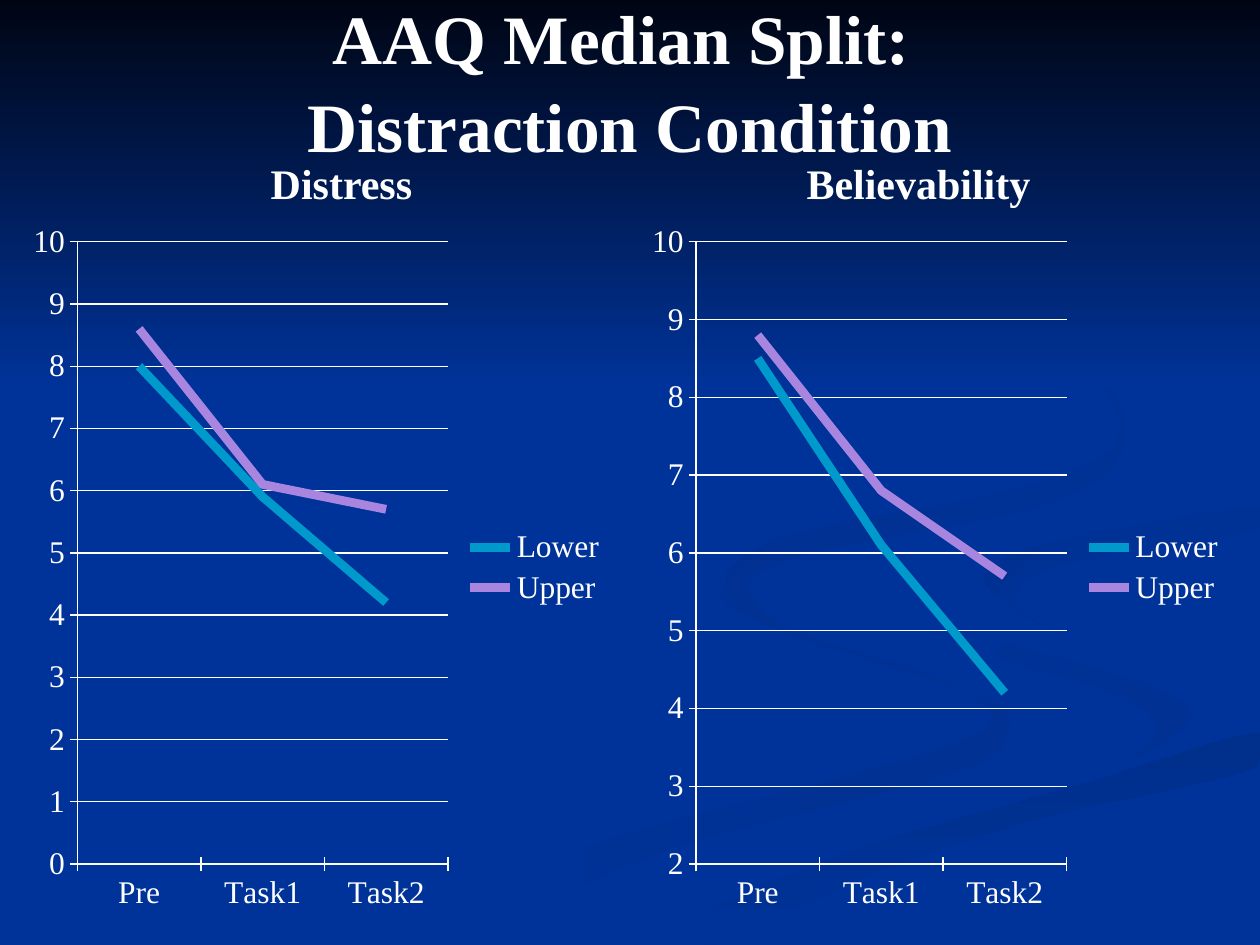
"""Build a slide with two line charts comparing lower and upper AAQ groups."""
from pptx import Presentation
from pptx.chart.data import CategoryChartData
from pptx.dml.color import RGBColor
from pptx.enum.chart import XL_CHART_TYPE, XL_LEGEND_POSITION, XL_MARKER_STYLE, XL_TICK_MARK
from pptx.enum.shapes import MSO_SHAPE
from pptx.enum.text import MSO_ANCHOR, PP_ALIGN
from pptx.util import Inches, Pt

LINE = XL_CHART_TYPE.LINE
RIGHT = XL_LEGEND_POSITION.RIGHT
NO_MARKER = XL_MARKER_STYLE.NONE
CROSS = XL_TICK_MARK.CROSS
RECTANGLE = MSO_SHAPE.RECTANGLE
CENTER = PP_ALIGN.CENTER
MIDDLE, BOTTOM = MSO_ANCHOR.MIDDLE, MSO_ANCHOR.BOTTOM

FONT = "Times New Roman"
WHITE, BLUE, NIGHT = "FFFFFF", "003399", "000514"
SERIES_COLORS = {"Lower": "0099CC", "Upper": "A886E0"}
CATEGORIES = ["Pre", "Task1", "Task2"]
CURVE_STEPS = 5

TITLE = "AAQ Median Split: \vDistraction Condition"
PANELS = [
    {"heading": "Distress", "placeholder": 1, "heading_left": 0.5, "chart_left": 0.17,
     "minimum": 0, "values": {"Lower": (8, 5.9, 4.2), "Upper": (8.6, 6.1, 5.7)}},
    {"heading": "Believability", "placeholder": 3, "heading_left": 5.08, "chart_left": 5.08,
     "minimum": 2, "values": {"Lower": (8.5, 6.1, 4.2), "Upper": (8.8, 6.8, 5.7)}},
]

# Each ribbon: start colour, end colour, clockwise angle, outline in 1/100 inch.
RIBBONS = [
    (BLUE, "003193", 0, [
        (574, 464), (614, 496), (731, 533), (783, 559), (774, 583), (684, 613), (458, 674),
        (300, 749), (361, 749), (532, 674), (756, 614), (800, 581), (781, 553), (654, 513),
        (581, 484)]),
    (BLUE, "003193", 45, [
        (724, 464), (758, 498), (870, 530), (930, 553), (943, 574), (894, 605), (918, 581),
        (892, 553), (797, 524), (733, 488)]),
    ("002F8C", BLUE, 90, [
        (503, 749), (571, 749), (695, 692), (821, 651), (998, 609), (998, 581), (867, 620),
        (696, 669), (569, 719)]),
    ("003091", BLUE, 45, [
        (781, 463), (826, 496), (805, 474), (843, 448), (998, 420), (998, 402), (865, 424),
        (799, 442)]),
    ("002F8E", BLUE, 45, [
        (683, 430), (825, 402), (883, 370), (890, 324), (843, 275), (762, 233), (846, 279),
        (889, 335), (861, 370), (763, 398), (637, 422), (580, 451), (584, 479), (622, 500),
        (593, 470), (614, 448)]),
]


def rgb(value):
    return RGBColor.from_string(value)


def style(font, size, bold=False):
    font.name, font.size, font.bold = FONT, Pt(size), bold
    font.color.rgb = rgb(WHITE)


def smooth_outline(points):
    """Return a closed Catmull-Rom curve through the points."""
    def blend(a, b, c, d, t):
        return b + t / 2 * (c - a + t * (2 * a - 5 * b + 4 * c - d + t * (3 * (b - c) + d - a)))

    count = len(points)
    curve = []
    for i in range(count):
        near = [points[(i + k) % count] for k in (-1, 0, 1, 2)]
        for step in range(CURVE_STEPS):
            x, y = (blend(*axis, step / CURVE_STEPS) for axis in zip(*near))
            curve.append((min(x, 1000), min(y, 750)))
    return curve


def paint(sp, start, end, angle):
    sp.shadow.inherit = False
    sp.line.fill.background()
    sp.fill.gradient()
    sp.fill.gradient_angle = -angle % 360
    for stop, color in zip(sp.fill.gradient_stops, (start, end)):
        stop.color.rgb = rgb(color)


def add_backdrop(s):
    shapes = []
    for start, end, angle, points in RIBBONS:
        curve = smooth_outline(points)
        builder = s.shapes.build_freeform(*curve[0], scale=Inches(0.01))
        builder.add_line_segments(curve[1:], close=True)
        shapes.append(builder.convert_to_shape())
        paint(shapes[-1], start, end, angle)
    shapes.append(s.shapes.add_shape(RECTANGLE, 0, 0, Inches(10), Inches(3.08)))
    paint(shapes[-1], NIGHT, BLUE, 90)
    for position, sp in enumerate(shapes, 2):
        s.shapes._spTree.insert(position, sp._element)


def fill_placeholder(sp, text, box, size, anchor):
    sp.left, sp.top, sp.width, sp.height = map(Inches, box)
    tf = sp.text_frame
    tf.text, tf.vertical_anchor = text, anchor
    p = tf.paragraphs[0]
    p.alignment = CENTER
    style(p.font, size, True)
    return p


def add_line_chart(s, panel):
    data = CategoryChartData()
    data.categories = CATEGORIES
    for name, values in panel["values"].items():
        data.add_series(name, values)
    box = map(Inches, (panel["chart_left"], 1.67, 4.75, 5.67))
    chart = s.shapes.add_chart(LINE, *box, data).chart
    style(chart.font, 18)
    chart.has_title = False
    chart.has_legend = True
    chart.legend.position = RIGHT
    chart.legend.include_in_layout = False
    chart.plots[0].vary_by_categories = False
    value_axis = chart.value_axis
    value_axis.minimum_scale, value_axis.maximum_scale = panel["minimum"], 10
    value_axis.major_unit = 1
    value_axis.has_major_gridlines = True
    for axis in (chart.category_axis, value_axis):
        axis.major_tick_mark = CROSS
    for line in (chart.category_axis.format.line, value_axis.format.line,
                 value_axis.major_gridlines.format.line):
        line.color.rgb, line.width = rgb(WHITE), Pt(0.75)
    for series in chart.plots[0].series:
        series.smooth = False
        series.marker.style = NO_MARKER
        series.format.line.color.rgb = rgb(SERIES_COLORS[series.name])
        series.format.line.width = Pt(5)


def main():
    prs = Presentation()
    prs.slide_width, prs.slide_height = Inches(10), Inches(7.5)
    s = prs.slides.add_slide(prs.slide_layouts.get_by_name("Comparison"))
    s.background.fill.solid()
    s.background.fill.fore_color.rgb = rgb(BLUE)
    placeholders = {sp.placeholder_format.idx: sp for sp in s.placeholders}
    add_backdrop(s)
    title = fill_placeholder(placeholders.pop(0), TITLE, (0.5, 0, 9, 1.25), 39.6, MIDDLE)
    title.line_spacing = 1.05
    for panel in PANELS:
        fill_placeholder(placeholders.pop(panel["placeholder"]), panel["heading"],
                         (panel["heading_left"], 1, 4.42, 0.7), 24, BOTTOM)
        add_line_chart(s, panel)
    for sp in placeholders.values():
        sp._element.getparent().remove(sp._element)
    prs.save("out.pptx")


if __name__ == "__main__":
    main()
